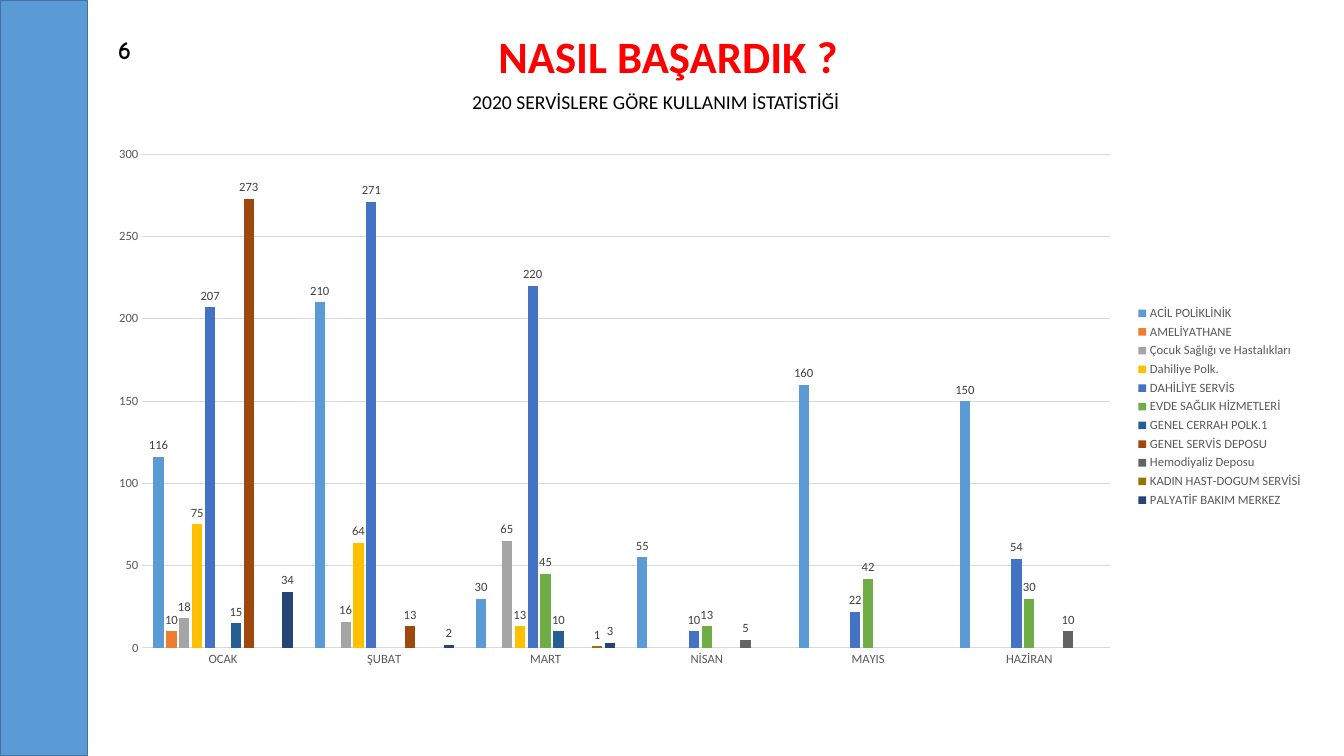
from pptx import Presentation
from pptx.chart.data import CategoryChartData as Data
from pptx.dml.color import RGBColor
from pptx.enum.chart import (XL_CHART_TYPE as Kind, XL_LABEL_POSITION as Spot,
                             XL_LEGEND_POSITION as Side, XL_TICK_MARK as Tick)
from pptx.enum.shapes import MSO_SHAPE as Preset
from pptx.enum.text import MSO_ANCHOR as Anchor, MSO_AUTO_SIZE as Fit, PP_ALIGN as Align
from pptx.util import Cm, Pt

BLUE = RGBColor(0x5B, 0x9B, 0xD5)
NAVY = RGBColor(0x43, 0x73, 0x9E)
RED = RGBColor(0xFF, 0x00, 0x00)
BLACK = RGBColor(0x00, 0x00, 0x00)
DARK = RGBColor(0x40, 0x40, 0x40)
GRAY = RGBColor(0x59, 0x59, 0x59)
PALE = RGBColor(0xD9, 0xD9, 0xD9)
ORANGE = RGBColor(0xED, 0x7D, 0x31)
SILVER = RGBColor(0xA5, 0xA5, 0xA5)
GOLD = RGBColor(0xFF, 0xC0, 0x00)
ROYAL = RGBColor(0x44, 0x72, 0xC4)
GREEN = RGBColor(0x70, 0xAD, 0x47)
TEAL = RGBColor(0x25, 0x5E, 0x91)
RUST = RGBColor(0x9E, 0x48, 0x0E)
SLATE = RGBColor(0x63, 0x63, 0x63)
OLIVE = RGBColor(0x99, 0x73, 0x00)
INDIGO = RGBColor(0x26, 0x44, 0x78)

MONTHS = ["OCAK", "ŞUBAT", "MART", "NİSAN", "MAYIS", "HAZİRAN"]
UNITS = [
    ("ACİL POLİKLİNİK", BLUE, [116, 210, 30, 55, 160, 150]),
    ("AMELİYATHANE", ORANGE, [10, None, None, None, None, None]),
    ("Çocuk Sağlığı ve Hastalıkları", SILVER, [18, 16, 65, None, None, None]),
    ("Dahiliye Polk.", GOLD, [75, 64, 13, None, None, None]),
    ("DAHİLİYE SERVİS", ROYAL, [207, 271, 220, 10, 22, 54]),
    ("EVDE SAĞLIK HİZMETLERİ", GREEN, [None, None, 45, 13, 42, 30]),
    ("GENEL CERRAH POLK.1", TEAL, [15, None, 10, None, None, None]),
    ("GENEL SERVİS DEPOSU", RUST, [273, 13, None, None, None, None]),
    ("Hemodiyaliz Deposu", SLATE, [None, None, None, 5, None, 10]),
    ("KADIN HAST-DOGUM SERVİSİ", OLIVE, [None, None, 1, None, None, None]),
    ("PALYATİF BAKIM MERKEZ", INDIGO, [34, 2, 3, None, None, None]),
]


def assign(item, **values):
    for name, value in values.items():
        setattr(item, name, value)


class Board:
    face = "Calibri"

    def __init__(self, deck):
        self.slide = deck.slides.add_slide(deck.slide_layouts[5])
        self.shapes = self.slide.shapes

    def font(self, font, size, color, bold=False, face=None):
        assign(font, name=face or self.face, size=Pt(size), bold=bold)
        font.color.rgb = color

    def line(self, line, color, width):
        line.color.rgb = color
        line.width = Pt(width)

    def band(self, box, fill, edge):
        shape = self.shapes.add_shape(Preset.RECTANGLE, *map(Cm, box))
        shape.shadow.inherit = False
        shape.fill.solid()
        shape.fill.fore_color.rgb = fill
        self.line(shape.line, edge, 1)

    def label(self, shape, text, align, wrap, **style):
        frame = shape.text_frame
        assign(frame, text=text, word_wrap=wrap, auto_size=Fit.SHAPE_TO_FIT_TEXT,
               vertical_anchor=Anchor.TOP)
        frame.paragraphs[0].alignment = align
        self.font(frame.paragraphs[0].runs[0].font, **style)

    def title(self, box, text, **style):
        shape = self.shapes.title
        assign(shape, **dict(zip(("left", "top", "width", "height"), map(Cm, box))))
        self.label(shape, text, Align.CENTER, False, **style)
        shape.text_frame.paragraphs[0].line_spacing = 1.0

    def text(self, box, text, align=Align.LEFT, wrap=False, **style):
        self.label(self.shapes.add_textbox(*map(Cm, box)), text, align, wrap, **style)

    def columns(self, box, groups, rows):
        data = Data()
        data.categories = groups
        for name, _, values in rows:
            data.add_series(name, values)
        chart = self.shapes.add_chart(Kind.COLUMN_CLUSTERED, *map(Cm, box), data).chart
        assign(chart, has_title=False, has_legend=True)
        self.font(chart.font, 10, BLACK)
        assign(chart.legend, position=Side.RIGHT, include_in_layout=False)
        self.font(chart.legend.font, 9, GRAY)
        self.axes(chart)
        plot = chart.plots[0]
        assign(plot, gap_width=219, overlap=-27, vary_by_categories=False)
        for bars, (_, color, _) in zip(plot.series, rows):
            bars.format.fill.solid()
            bars.format.fill.fore_color.rgb = color
            bars.invert_if_negative = False
            assign(bars.data_labels, show_value=True, position=Spot.OUTSIDE_END)
            self.font(bars.data_labels.font, 9, DARK)

    def axes(self, chart):
        across, up = chart.category_axis, chart.value_axis
        for axis in (across, up):
            assign(axis, major_tick_mark=Tick.NONE, minor_tick_mark=Tick.NONE)
            self.font(axis.tick_labels.font, 9, GRAY)
        self.line(across.format.line, PALE, 0.75)
        assign(up, minimum_scale=0, maximum_scale=300, major_unit=50)
        up.format.line.fill.background()
        self.line(up.major_gridlines.format.line, PALE, 0.75)


def main():
    deck = Presentation()
    assign(deck, slide_width=Cm(33.87), slide_height=Cm(19.05))
    board = Board(deck)
    board.band((0, 0.02, 2.2, 19.03), BLUE, NAVY)
    board.title((12.27, 0.6, 9.14, 1.63), "NASIL BAŞARDIK ?", size=32, color=RED, bold=True)
    board.text((2.72, 0.74, 0.89, 1.02), "6", size=18, color=BLACK, bold=True,
               face="Comic Neue")
    board.text((3.63, 2.13, 25.8, 0.86), "2020 SERVİSLERE GÖRE KULLANIM İSTATİSTİĞİ",
               Align.CENTER, True, size=14, color=BLACK)
    board.columns((2.39, 3.43, 30.7, 13.64), MONTHS, UNITS)
    deck.save("out.pptx")


if __name__ == "__main__":
    main()
